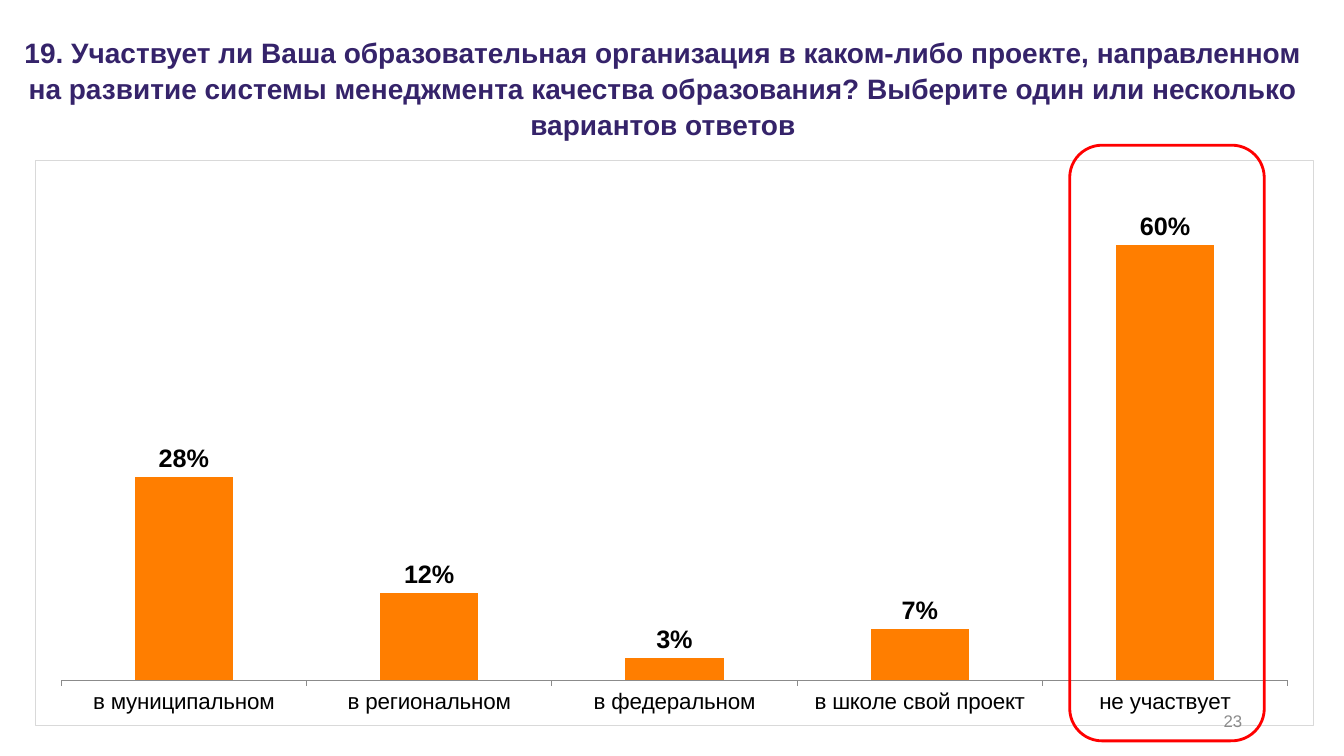
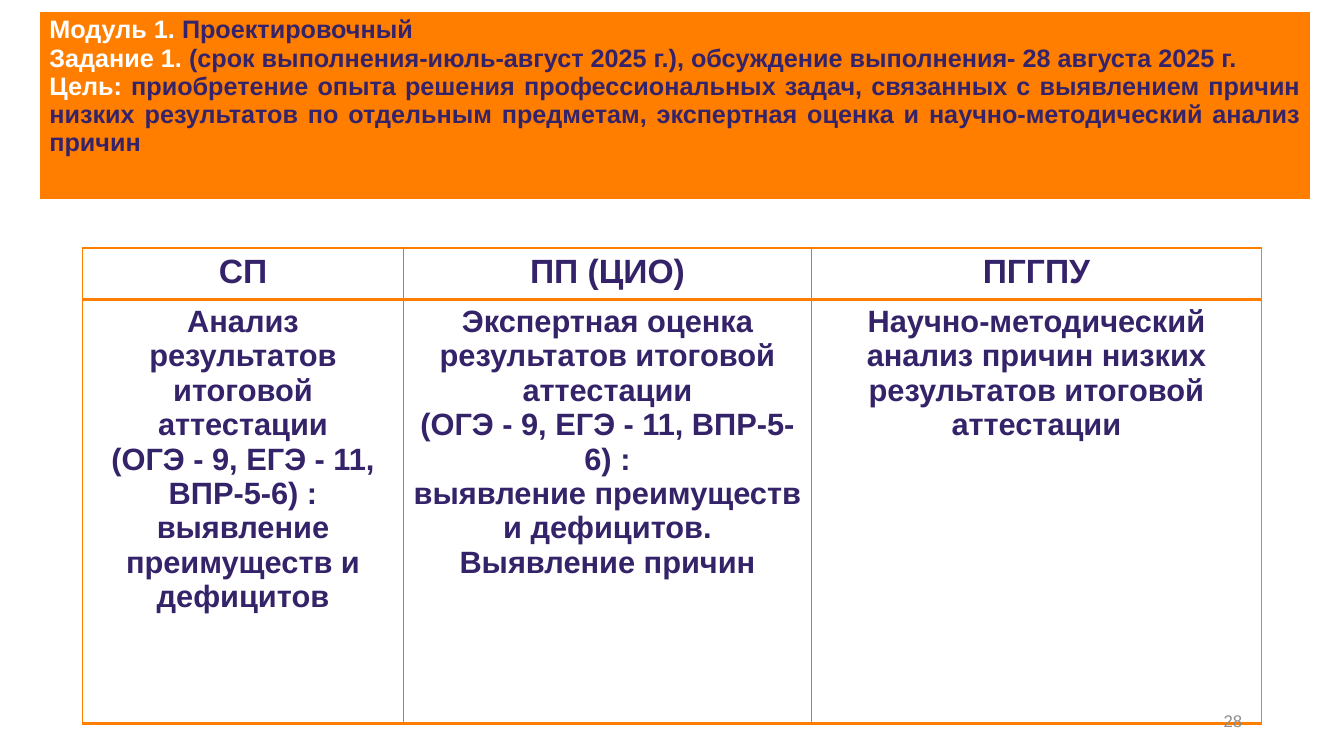
"""Build two survey slides: a column chart of project participation and a module task table."""
from dataclasses import dataclass

from pptx import Presentation
from pptx.chart.data import CategoryChartData
from pptx.dml.color import RGBColor
from pptx.enum.chart import XL_CHART_TYPE, XL_LABEL_POSITION, XL_TICK_LABEL_POSITION, XL_TICK_MARK
from pptx.enum.shapes import MSO_SHAPE
from pptx.enum.text import MSO_ANCHOR, MSO_AUTO_SIZE, PP_ALIGN
from pptx.oxml import parse_xml
from pptx.oxml.ns import nsdecls, qn
from pptx.util import Pt


@dataclass(frozen=True)
class Theme:
    font: str = "Arial"
    ink: str = "35236A"
    accent: str = "FF7E00"
    white: str = "FFFFFF"
    black: str = "000000"
    grey: str = "8B8B8B"
    frame: str = "D9D9D9"
    alert: str = "FF0000"
    title_size: int = 20
    header_size: int = 24
    cell_size: int = 22
    band_size: int = 18
    value_size: int = 18
    category_size: int = 16
    number_size: int = 12


THEME = Theme()
EMU_PER_PX = 9144
SLIDE_SIZE = (1333, 750)
TITLE_BOX = (12, 28, 1291, 110)
CHART_BOX = (35, 159, 1268, 561)
HIGHLIGHT_BOX = (1061, 144, 193, 591)
NUMBER_BOX = (942, 695, 300, 40)
BAND_ORIGIN, BAND_COLUMNS, BAND_ROWS = (39, 11), (1261,), (187,)
TASKS_ORIGIN, TASKS_COLUMNS, TASKS_ROWS = (82, 246), (318, 405, 446), (51, 421)

QUESTION = (
    "19. Участвует ли Ваша образовательная организация в каком-либо проекте, направленном "
    "на развитие системы менеджмента качества образования? Выберите один или несколько "
    "вариантов ответов"
)
ANSWERS = {
    "в муниципальном": 0.28,
    "в региональном": 0.12,
    "в федеральном": 0.03,
    "в школе свой проект": 0.07,
    "не участвует": 0.6,
}
MODULE = [
    ("Модуль 1. ", "Проектировочный"),
    ("Задание 1. ", "(срок выполнения-июль-август 2025 г.), обсуждение выполнения- 28 августа 2025 г."),
    ("Цель: ", "приобретение опыта решения профессиональных задач, связанных с выявлением причин "
               "низких результатов по отдельным предметам, экспертная оценка и научно-методический "
               "анализ причин"),
]
TASKS = {
    "СП": [
        "Анализ результатов итоговой аттестации\n(ОГЭ - 9, ЕГЭ - 11, ВПР-5-6) :",
        "выявление преимуществ и дефицитов",
    ],
    "ПП (ЦИО)": [
        "Экспертная оценка",
        "результатов итоговой аттестации\n(ОГЭ - 9, ЕГЭ - 11, ВПР-5-6) :",
        "выявление преимуществ и дефицитов.",
        "Выявление причин",
    ],
    "ПГГПУ": ["Научно-методический анализ причин низких результатов итоговой аттестации"],
}


def px(*lengths):
    return [round(length * EMU_PER_PX) for length in lengths]


def assign(target, values):
    for attribute, value in values.items():
        setattr(target, attribute, value)


def style_font(font, size, color, bold=False):
    assign(font, {"name": THEME.font, "size": Pt(size), "bold": bold})
    font.color.rgb = RGBColor.from_string(color)


def style_line(line, color, width):
    line.color.rgb = RGBColor.from_string(color)
    line.width = Pt(width)


def write(frame, paragraphs, size, align, bold=True, spacing=None):
    for index, pieces in enumerate(paragraphs):
        paragraph = frame.paragraphs[0] if index == 0 else frame.add_paragraph()
        assign(paragraph, {"alignment": align, "line_spacing": spacing})
        for text, color in pieces:
            for row, words in enumerate(text.split("\n")):
                if row:
                    paragraph.add_line_break()
                run = paragraph.add_run()
                run.text = words
                style_font(run.font, size, color, bold)


def add_number(slide, number):
    frame = slide.shapes.add_textbox(*px(*NUMBER_BOX)).text_frame
    assign(frame, {"word_wrap": True, "vertical_anchor": MSO_ANCHOR.MIDDLE})
    write(frame, [[(number, THEME.grey)]], THEME.number_size, PP_ALIGN.RIGHT, bold=False)


def add_grid(slide, origin, columns, rows):
    box = px(*origin, sum(columns), sum(rows))
    table = slide.shapes.add_table(len(rows), len(columns), *box).table
    assign(table, {"first_row": False, "horz_banding": False})
    for column, width in zip(table.columns, px(*columns)):
        column.width = width
    for row, height in zip(table.rows, px(*rows)):
        row.height = height
    return table


def set_borders(cell, borders):
    for side in "LRTB":
        color, width = borders[side]
        cell._tc.get_or_add_tcPr().append(parse_xml(
            f'<a:ln{side} {nsdecls("a")} w="{Pt(width)}"><a:solidFill>'
            f'<a:srgbClr val="{color}"/></a:solidFill></a:ln{side}>'
        ))


def add_title(slide):
    title = slide.shapes.title
    assign(title, dict(zip(("left", "top", "width", "height"), px(*TITLE_BOX))))
    assign(title.text_frame, {
        "word_wrap": True, "auto_size": MSO_AUTO_SIZE.NONE, "vertical_anchor": MSO_ANCHOR.TOP,
    })
    write(title.text_frame, [[(QUESTION, THEME.ink)]], THEME.title_size, PP_ALIGN.CENTER, spacing=1.07)


def add_answers(slide):
    answers = CategoryChartData(number_format="0%")
    answers.categories = list(ANSWERS)
    answers.add_series("Series 1", list(ANSWERS.values()))
    chart = slide.shapes.add_chart(XL_CHART_TYPE.COLUMN_CLUSTERED, *px(*CHART_BOX), answers).chart
    assign(chart, {"has_legend": False, "has_title": False})
    style_font(chart.font, 10, THEME.black)
    chart._chartSpace.find(qn("c:chart")).addnext(parse_xml(
        f'<c:spPr {nsdecls("c", "a")}><a:noFill/><a:ln w="{Pt(0.75)}"><a:solidFill>'
        f'<a:srgbClr val="{THEME.frame}"/></a:solidFill></a:ln></c:spPr>'
    ))

    assign(chart.value_axis, {
        "visible": False, "has_major_gridlines": False, "minimum_scale": 0, "maximum_scale": 0.7,
    })
    assign(chart.category_axis, {
        "major_tick_mark": XL_TICK_MARK.OUTSIDE, "tick_label_position": XL_TICK_LABEL_POSITION.LOW,
    })
    style_font(chart.category_axis.tick_labels.font, THEME.category_size, THEME.black)
    style_line(chart.category_axis.format.line, THEME.grey, 0.5)

    plot = chart.plots[0]
    assign(plot, {"gap_width": 150, "vary_by_categories": False, "has_data_labels": True})
    assign(plot.data_labels, {
        "show_value": True, "position": XL_LABEL_POSITION.OUTSIDE_END,
        "number_format": "0%", "number_format_is_linked": False,
    })
    style_font(plot.data_labels.font, THEME.value_size, THEME.black, bold=True)
    columns_fill = plot.series[0].format.fill
    columns_fill.solid()
    columns_fill.fore_color.rgb = RGBColor.from_string(THEME.accent)


def add_highlight(slide):
    highlight = slide.shapes.add_shape(MSO_SHAPE.ROUNDED_RECTANGLE, *px(*HIGHLIGHT_BOX))
    highlight.shadow.inherit = False
    highlight.fill.background()
    style_line(highlight.line, THEME.alert, 2)


def add_tasks(slide):
    table = add_grid(slide, TASKS_ORIGIN, TASKS_COLUMNS, TASKS_ROWS)
    edge, rule, divider = (THEME.accent, 1), (THEME.accent, 2), (THEME.grey, 1)
    last = len(TASKS) - 1
    for column, (partner, duties) in enumerate(TASKS.items()):
        sides = {"L": divider if column else edge, "R": edge if column == last else divider}
        parts = [
            ([partner], THEME.header_size, {"T": edge, "B": rule}),
            (duties, THEME.cell_size, {"T": rule, "B": rule}),
        ]
        for row, (lines, size, ends) in enumerate(parts):
            cell = table.cell(row, column)
            set_borders(cell, sides | ends)
            cell.fill.background()
            write(cell.text_frame, [[(line, THEME.ink)] for line in lines], size, PP_ALIGN.CENTER)


def add_band(slide):
    cell = add_grid(slide, BAND_ORIGIN, BAND_COLUMNS, BAND_ROWS).cell(0, 0)
    cell.fill.solid()
    cell.fill.fore_color.rgb = RGBColor.from_string(THEME.accent)
    lines = [[(label, THEME.white), (detail, THEME.ink)] for label, detail in MODULE]
    write(cell.text_frame, lines, THEME.band_size, PP_ALIGN.JUSTIFY)


def main():
    deck = Presentation()
    assign(deck, dict(zip(("slide_width", "slide_height"), px(*SLIDE_SIZE))))
    title_only, blank = deck.slide_layouts[5], deck.slide_layouts[6]

    survey = deck.slides.add_slide(title_only)
    add_title(survey)
    add_answers(survey)
    add_number(survey, "23")
    add_highlight(survey)

    module = deck.slides.add_slide(blank)
    add_tasks(module)
    add_band(module)
    add_number(module, "28")

    deck.save("out.pptx")


if __name__ == "__main__":
    main()
